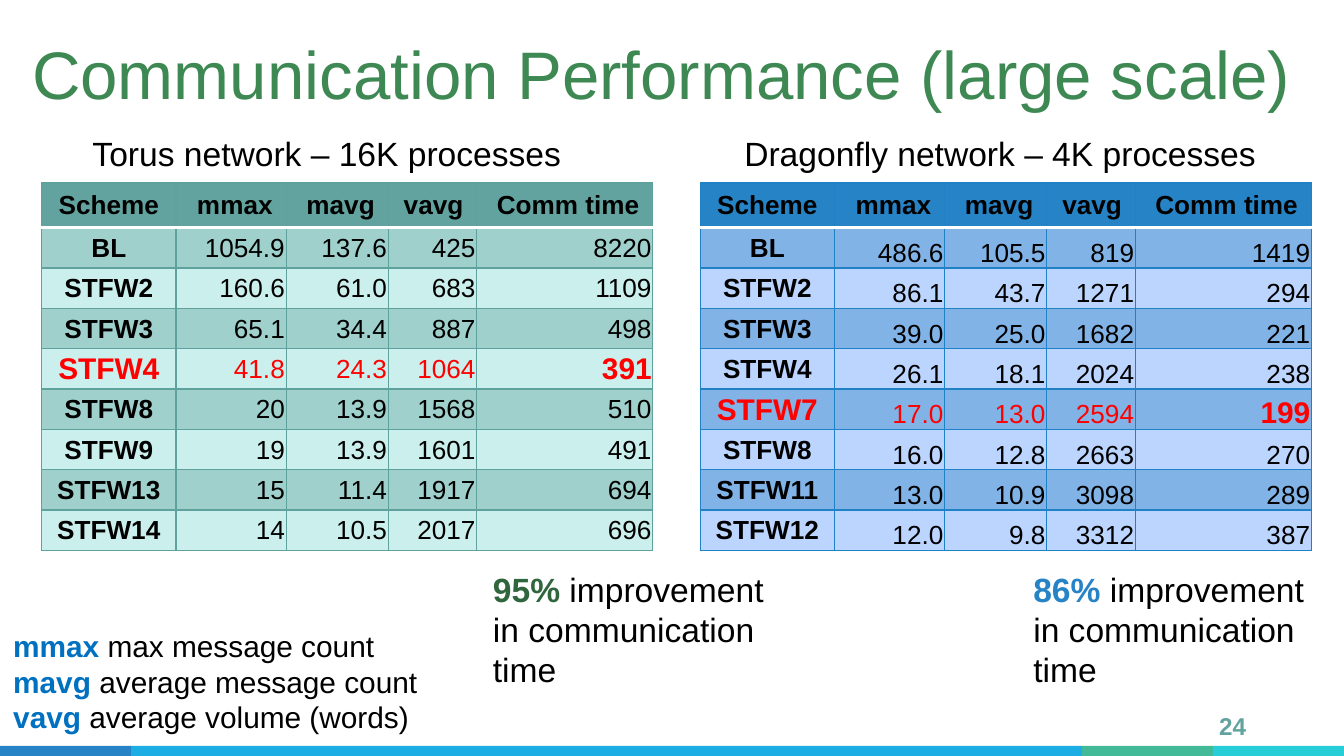
from lxml.etree import SubElement
from pptx import Presentation
from pptx.dml.color import RGBColor
from pptx.enum.shapes import MSO_SHAPE
from pptx.enum.text import MSO_ANCHOR, MSO_AUTO_SIZE, PP_ALIGN
from pptx.oxml.ns import qn
from pptx.util import Pt

BLACK = RGBColor(0x00, 0x00, 0x00)
WHITE = RGBColor(0xFF, 0xFF, 0xFF)
RED = RGBColor(0xFF, 0x00, 0x00)
TITLE_GREEN = RGBColor(0x3E, 0x88, 0x53)
DARK_GREEN = RGBColor(0x2F, 0x66, 0x3E)
TERM_BLUE = RGBColor(0x00, 0x70, 0xC0)
TEAL = RGBColor(0x62, 0xA3, 0x9F)
TEAL_LINE = RGBColor(0x5E, 0xA1, 0x9D)
TEAL_BAND = RGBColor(0x9F, 0xD0, 0xCC)
TEAL_LIGHT = RGBColor(0xCB, 0xEF, 0xEC)
BLUE = RGBColor(0x26, 0x83, 0xC6)
BLUE_LINE = RGBColor(0x21, 0x81, 0xC6)
BLUE_BAND = RGBColor(0x82, 0xB3, 0xE7)
BLUE_LIGHT = RGBColor(0xBC, 0xD5, 0xFF)
SKY = RGBColor(0x1C, 0xAD, 0xE4)
GREEN = RGBColor(0x42, 0xBA, 0x97)
CYAN = RGBColor(0x27, 0xCE, 0xD7)

HEADINGS = ["Scheme", "mmax", "mavg", "vavg", "Comm time"]
COLUMN_WIDTHS = [72, 59, 54.7, 47.5, 94.3]
HEADER_HEIGHT, ROW_HEIGHT = 23.5, 21.6
TORUS = [
    ["BL", "1054.9", "137.6", "425", "8220"],
    ["STFW2", "160.6", "61.0", "683", "1109"],
    ["STFW3", "65.1", "34.4", "887", "498"],
    ["STFW4", "41.8", "24.3", "1064", "391"],
    ["STFW8", "20", "13.9", "1568", "510"],
    ["STFW9", "19", "13.9", "1601", "491"],
    ["STFW13", "15", "11.4", "1917", "694"],
    ["STFW14", "14", "10.5", "2017", "696"],
]
DRAGONFLY = [
    ["BL", "486.6", "105.5", "819", "1419"],
    ["STFW2", "86.1", "43.7", "1271", "294"],
    ["STFW3", "39.0", "25.0", "1682", "221"],
    ["STFW4", "26.1", "18.1", "2024", "238"],
    ["STFW7", "17.0", "13.0", "2594", "199"],
    ["STFW8", "16.0", "12.8", "2663", "270"],
    ["STFW11", "13.0", "10.9", "3098", "289"],
    ["STFW12", "12.0", "9.8", "3312", "387"],
]


class SlideBuilder:
    """Holds the type style and the current slide, and adds its elements."""

    font_name = "Arial"

    def __init__(self, slide):
        self.slide = slide

    def run(self, paragraph, wording, size, color=BLACK, bold=False):
        run = paragraph.add_run()
        run.text = wording
        run.font.name = self.font_name
        run.font.size = Pt(size)
        run.font.bold = bold
        run.font.color.rgb = color

    def title(self, wording, left, top, width, height):
        heading = self.slide.shapes.title
        heading.left, heading.top = Pt(left), Pt(top)
        heading.width, heading.height = Pt(width), Pt(height)
        frame = heading.text_frame
        frame.auto_size = MSO_AUTO_SIZE.NONE
        frame.vertical_anchor = MSO_ANCHOR.BOTTOM
        frame.margin_left = frame.margin_right = Pt(7.2)
        frame.margin_top = frame.margin_bottom = Pt(7.2)
        frame.paragraphs[0].alignment = PP_ALIGN.LEFT
        self.run(frame.paragraphs[0], wording, 36, TITLE_GREEN)

    def text(self, lines, left, top, width, height, size, wrap=False,
             align=PP_ALIGN.LEFT, margin=3.6):
        box = self.slide.shapes.add_textbox(Pt(left), Pt(top), Pt(width), Pt(height))
        frame = box.text_frame
        frame.word_wrap = wrap
        frame.margin_top = frame.margin_bottom = Pt(margin)
        for index, line in enumerate(lines):
            paragraph = frame.add_paragraph() if index else frame.paragraphs[0]
            paragraph.alignment = align
            for wording, color, bold in line:
                self.run(paragraph, wording, size, color, bold)

    def bar(self, left, width, color):
        stripe = self.slide.shapes.add_shape(
            MSO_SHAPE.RECTANGLE, Pt(left), Pt(399.6), Pt(width), Pt(5.4))
        stripe.shadow.inherit = False
        stripe.fill.solid()
        stripe.fill.fore_color.rgb = color
        stripe.line.fill.background()

    def border(self, cell, side, color, width):
        properties = cell._tc.get_or_add_tcPr()
        line = SubElement(properties, qn(f"a:ln{side}"), w=str(Pt(width)))
        SubElement(SubElement(line, qn("a:solidFill")), qn("a:srgbClr"), val=str(color))

    def table(self, records, left, best, palette, number_anchor):
        header_fill, line_color, band_fill, light_fill = palette
        rows = [HEADINGS] + records
        height = HEADER_HEIGHT + ROW_HEIGHT * len(records)
        table = self.slide.shapes.add_table(
            len(rows), len(HEADINGS), Pt(left), Pt(98), Pt(sum(COLUMN_WIDTHS)),
            Pt(height)).table
        table.horz_banding = False
        for column, width in zip(table.columns, COLUMN_WIDTHS):
            column.width = Pt(width)
        for r, values in enumerate(rows):
            table.rows[r].height = Pt(ROW_HEIGHT if r else HEADER_HEIGHT)
            fill = header_fill if r == 0 else band_fill if r % 2 else light_fill
            is_best = values[0] == best
            for c, value in enumerate(values):
                cell = table.cell(r, c)
                for side in "LRTB":
                    under_header = (r, side) in ((0, "B"), (1, "T"))
                    self.border(cell, side, WHITE if under_header else line_color,
                                2 if under_header else 0.75)
                cell.fill.solid()
                cell.fill.fore_color.rgb = fill
                cell.vertical_anchor = number_anchor if r and c else MSO_ANCHOR.MIDDLE
                if r:
                    cell.margin_left = cell.margin_right = cell.margin_top = Pt(0.7)
                    cell.margin_bottom = Pt(0)
                paragraph = cell.text_frame.paragraphs[0]
                paragraph.alignment = PP_ALIGN.RIGHT if c else PP_ALIGN.CENTER
                emphasized = is_best and c in (0, len(values) - 1)
                self.run(paragraph, value, 16 if emphasized else 14,
                         RED if is_best else BLACK, r == 0 or c == 0 or emphasized)


def main():
    deck = Presentation()
    deck.slide_width, deck.slide_height = Pt(720), Pt(405)
    builder = SlideBuilder(deck.slides.add_slide(deck.slide_layouts[5]))

    for left, width, color in ((579.6, 70.2, GREEN), (649.8, 70.2, CYAN),
                               (0, 70.2, BLUE), (70.2, 509.4, SKY)):
        builder.bar(left, width, color)
    builder.title("Communication Performance (large scale)", 10, 0, 710, 67.7)
    builder.text([[("24", TEAL, True)]], 631.4, 373.7, 43.2, 24.5, 13,
                 wrap=True, align=PP_ALIGN.RIGHT, margin=7.2)

    builder.table(TORUS, 22.3, "STFW4", (TEAL, TEAL_LINE, TEAL_BAND, TEAL_LIGHT),
                  MSO_ANCHOR.MIDDLE)
    builder.table(DRAGONFLY, 375.1, "STFW7", (BLUE, BLUE_LINE, BLUE_BAND, BLUE_LIGHT),
                  MSO_ANCHOR.BOTTOM)
    for caption, left, width in (("Torus network – 16K processes", 42.5, 280),
                                 ("Dragonfly network – 4K processes", 391.7, 291)):
        builder.text([[(caption, BLACK, False)]], left, 67.7, width, 29, 18)

    terms = (("mmax", " max message count"), ("mavg", " average message count"),
             ("vavg", " average volume (words)"))
    builder.text([[(term, TERM_BLUE, True), (meaning, BLACK, False)]
                  for term, meaning in terms], 0, 332.6, 238.3, 65.5, 16)
    for share, color, left in (("95% ", DARK_GREEN, 257), ("86% ", BLUE, 546.5)):
        builder.text([[(share, color, True),
                       ("improvement in communication time", BLACK, False)]],
                     left, 301, 167.8, 72.7, 18, wrap=True)

    deck.save("out.pptx")


if __name__ == "__main__":
    main()
